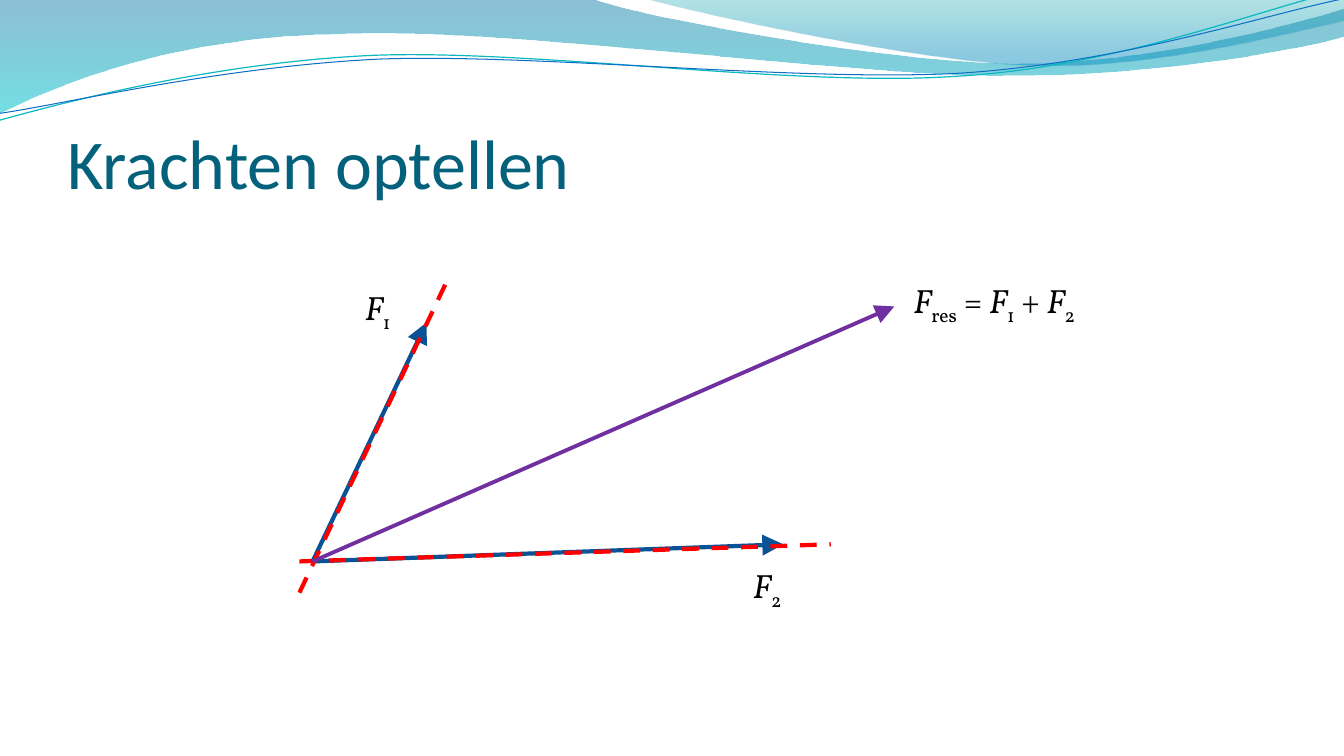
from lxml import etree
from pptx import Presentation
from pptx.dml.color import RGBColor
from pptx.enum.dml import MSO_LINE
from pptx.enum.shapes import MSO_CONNECTOR
from pptx.enum.text import MSO_ANCHOR, MSO_AUTO_SIZE, PP_ALIGN
from pptx.oxml.ns import qn
from pptx.util import Inches, Pt

STRAIGHT = MSO_CONNECTOR.STRAIGHT
DASH = MSO_LINE.DASH
FIT_SHAPE, NO_FIT = MSO_AUTO_SIZE.SHAPE_TO_FIT_TEXT, MSO_AUTO_SIZE.NONE
BOTTOM, LEFT = MSO_ANCHOR.BOTTOM, PP_ALIGN.LEFT

TITLE = "Krachten optellen"

# Outlines in inches: first the start point, then lines (2 numbers)
# and Bézier curves (6 numbers).
# Gradient stops from top to bottom: position, colour, opacity in percent.
BANDS = [
    ([(0, 0), (5.87, -0.01),
      (6.34, 0.17, 8.85, 0.63, 10.11, 0.63),
      (11.38, 0.63, 12.78, 0.26, 13.33, 0.09),
      (13.35, 0.36),
      (13.11, 0.44, 11.6, 0.76, 9.94, 0.75),
      (8.29, 0.75, 5.09, 0.28, 3.43, 0.34),
      (1.72, 0.36, 0.61, 0.83, -0.01, 1.13)],
     [(0, "0074A1", 45), (1, "00C6CF", 55)]),
    ([(6.39, -0.01),
      (6.79, 0.11, 9.09, 0.62, 10.25, 0.65),
      (11.41, 0.69, 12.82, 0.32, 13.33, 0.21),
      (13.33, 0)],
     [(0, "00A1A9", 30), (0.8, "008BBF", 45)]),
]
# Waves are given level and then turned by WAVE_ROTATION degrees.
WAVE_ROTATION = 357.3
WAVES = [
    ([(-0.03, 0.88),
      (0.63, 0.73, 2.11, 0.41, 3.69, 0.41),
      (5.28, 0.42, 7.89, 0.93, 9.49, 0.89),
      (11.09, 0.87, 12.54, 0.36, 13.33, 0.22)], "0AB8BF", 0.85),
    ([(-0.02, 0.81),
      (0.62, 0.75, 2.18, 0.45, 3.78, 0.45),
      (5.37, 0.47, 7.95, 0.88, 9.54, 0.86),
      (11.14, 0.83, 12.57, 0.42, 13.36, 0.3)], "0F6FC6", 0.75),
]

ORIGIN = (3.1, 5.57)
FORCE, WORK_LINE, RESULTANT = "095295", "FF0000", "7030A0"
# start, end, colour, width in points, is a force arrow
VECTORS = [
    (ORIGIN, (7.77, 5.4), FORCE, 3, True),
    ((2.97, 5.57), (8.24, 5.4), WORK_LINE, 3, False),
    (ORIGIN, (4.23, 3.2), FORCE, 3, True),
    ((2.97, 5.88), (4.46, 2.73), WORK_LINE, 3, False),
    (ORIGIN, (8.87, 3.04), RESULTANT, 2.75, True),
]

# left, top, width, then the symbols as (text, style)
SYMBOL, INDEX, PLAIN = "symbol", "index", "plain"
F1 = [("F", SYMBOL), ("1", INDEX)]
F2 = [("F", SYMBOL), ("2", INDEX)]
LABELS = [
    (3.52, 2.8, 0.53, F1),
    (7.37, 5.56, 0.53, F2),
    (8.96, 2.73, 2.14, [("F", SYMBOL), ("res", INDEX), (" = ", PLAIN),
                        *F1, (" + ", PLAIN), *F2]),
]


def rgb(value):
    return RGBColor.from_string(value)


def add_outline(shapes, outline, close):
    """Draw a freeform through all points, then join point triples into curves."""
    points = [(Inches(x), Inches(y)) for segment in outline
              for x, y in zip(segment[::2], segment[1::2])]
    builder = shapes.build_freeform(*points[0])
    builder.add_line_segments(points[1:], close=close)
    shape = builder.convert_to_shape()
    shape.shadow.inherit = False
    lines = iter(list(shape._element.iter(qn("a:lnTo"))))
    for segment in outline[1:]:
        first = next(lines)
        if len(segment) == 6:
            first.tag = qn("a:cubicBezTo")
            for _ in range(2):
                line = next(lines)
                first.append(line[0])
                line.getparent().remove(line)
    return shape


def add_band(shapes, outline, stops):
    band = add_outline(shapes, outline, True)
    band.line.fill.background()
    band.fill.gradient()
    band.fill.gradient_angle = 270
    for stop, (position, color, _) in zip(band.fill.gradient_stops, stops):
        stop.position = position
        stop.color.rgb = rgb(color)
    colors = band._element.spPr.iter(qn("a:srgbClr"))
    for color_element, (_, _, opacity) in zip(colors, stops):
        etree.SubElement(color_element, qn("a:alpha"), val=str(opacity * 1000))


def add_wave(shapes, outline, color, width):
    wave = add_outline(shapes, outline, False)
    wave.rotation = WAVE_ROTATION
    wave.fill.background()
    wave.line.color.rgb = rgb(color)
    wave.line.width = Pt(width)


def add_vector(shapes, start, end, color, width, is_force):
    vector = shapes.add_connector(
        STRAIGHT, *(Inches(value) for value in (*start, *end)))
    vector.line.color.rgb = rgb(color)
    vector.line.width = Pt(width)
    properties = vector._element.spPr
    if is_force:
        etree.SubElement(properties.find(qn("a:ln")), qn("a:tailEnd"),
                         type="triangle", w="lg", len="lg")
    else:
        vector.line.dash_style = DASH
    etree.SubElement(properties, qn("a:effectLst"))


def format_font(font, name, size, color):
    font.name = name
    font.size = Pt(size)
    font.color.rgb = rgb(color)


def add_label(shapes, left, top, width, symbols):
    label = shapes.add_textbox(
        Inches(left), Inches(top), Inches(width), Inches(0.5))
    label.text_frame.word_wrap = False
    label.text_frame.auto_size = FIT_SHAPE
    paragraph = label.text_frame.paragraphs[0]
    format_font(paragraph.font, "Vollkorn", 24, "000000")
    for text, style in symbols:
        run = paragraph.add_run()
        run.text = text
        run.font.italic = style == SYMBOL
        if style == INDEX:
            run.font._element.set("baseline", "-25000")


def place_title(title):
    title.left, title.top = Inches(0.67), Inches(0.77)
    title.width, title.height = Inches(12), Inches(1.25)
    frame = title.text_frame
    frame.text = TITLE
    frame.auto_size = NO_FIT
    frame.vertical_anchor = BOTTOM
    frame.margin_left = frame.margin_right = frame.margin_bottom = 0
    frame.margin_top = Inches(0.05)
    paragraph = frame.paragraphs[0]
    paragraph.alignment = LEFT
    format_font(paragraph.font, "Calibri", 50, "04617B")


def main():
    deck = Presentation()
    deck.slide_width, deck.slide_height = Inches(13.33), Inches(7.5)
    shapes = deck.slides.add_slide(deck.slide_layouts[5]).shapes
    place_title(shapes.title)
    for band in BANDS:
        add_band(shapes, *band)
    wave_group = shapes.add_group_shape()
    for wave in WAVES:
        add_wave(wave_group.shapes, *wave)
    # Bring the title in front of the decoration.
    shapes._spTree.append(shapes.title._element)
    for vector in VECTORS:
        add_vector(shapes, *vector)
    for label in LABELS:
        add_label(shapes, *label)
    deck.save("out.pptx")


if __name__ == "__main__":
    main()
